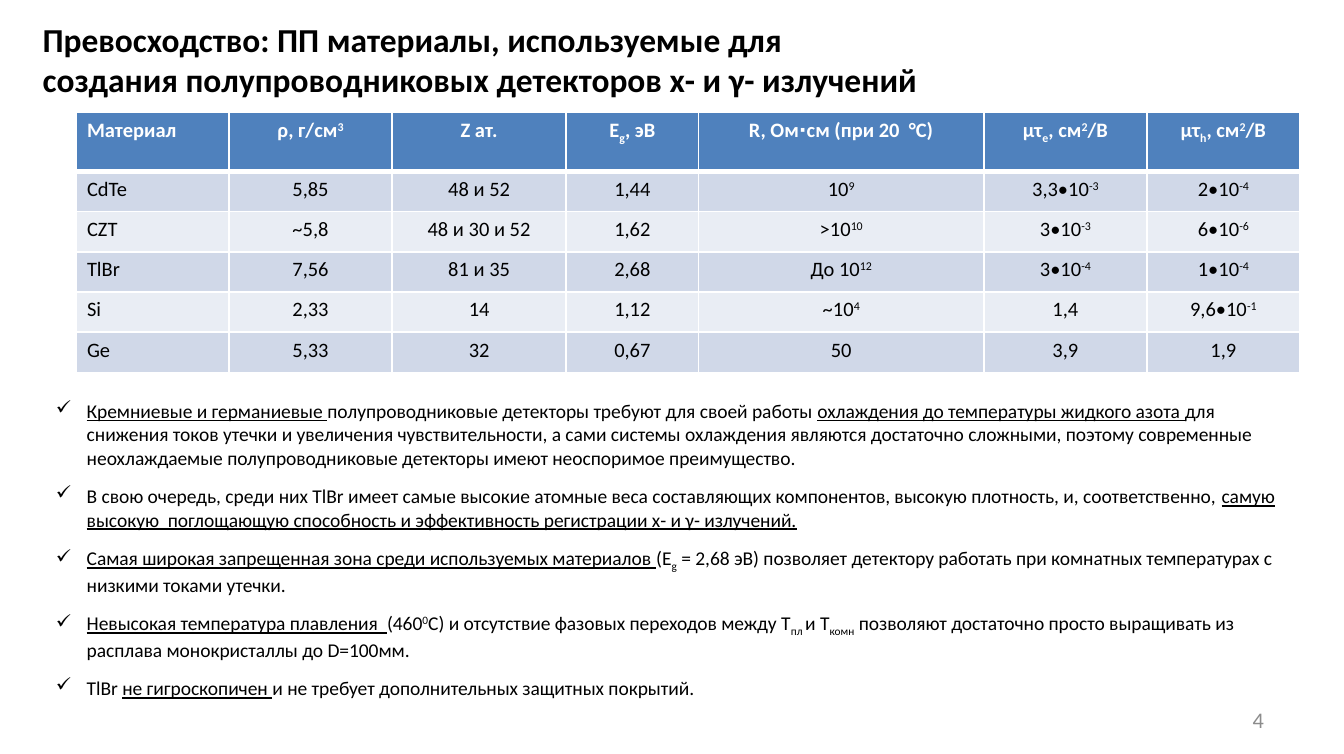
from lxml.etree import SubElement
from pptx import Presentation
from pptx.dml.color import RGBColor
from pptx.enum.shapes import MSO_SHAPE as Preset
from pptx.enum.text import MSO_ANCHOR as Anchor, PP_ALIGN as Align
from pptx.oxml.ns import qn
from pptx.util import Inches, Pt

BLACK, WHITE, GRAY = "000000", "FFFFFF", "8C8C8C"
HEADER, ODD_BAND, EVEN_BAND = "4F81BD", "D0D8E8", "E9EDF4"

TITLE = ("Превосходство: ПП материалы, используемые для |\n|"
         "создания полупроводниковых детекторов х- и γ- излучений")

# "|" separates spans; a span led by ^ is raised, by _ lowered, by < underlined.
MATERIALS = [
    ["Материал", "ρ, г/см|^3", "Z ат.", "Е|_g|, эВ", "R, Ом⋅см (при 20  °С)",
     "μτ|_е|, см|^2|/В", "μτ|_h|, см|^2|/В"],
    ["CdTe", "5,85", "48 и 52", "1,44", "10|^9", "3,3•10|^-3", "2•10|^-4"],
    ["CZT", "~5,8", "48 и 30 и 52", "1,62", ">10|^10", "3•10|^-3", "6•10|^-6"],
    ["TlBr", "7,56", "81 и 35", "2,68", "До 10|^12", "3•10|^-4", "1•10|^-4"],
    ["Si", "2,33", "14", "1,12", "~10|^4", "1,4", "9,6•10|^-1"],
    ["Ge", "5,33", "32", "0,67", "50", "3,9", "1,9"],
]
COLUMN_WIDTHS = [11.4, 12.2, 13, 9.9, 21.3, 12.2, 11.4]
ROW_HEIGHTS = [4.4] + [3] * 5

ADVANTAGES = [
    "<Кремниевые и германиевые |полупроводниковые детекторы требуют для своей работы "
    "|<охлаждения до температуры жидкого азота |для снижения токов утечки и увеличения "
    "чувствительности, а сами системы охлаждения являются достаточно сложными, поэтому "
    "современные неохлаждаемые полупроводниковые детекторы имеют неоспоримое преимущество.",
    "В свою очередь, среди них TlBr имеет самые высокие атомные веса составляющих "
    "компонентов, высокую плотность, и, соответственно, |<самую высокую  поглощающую "
    "способность и эффективность регистрации х- и γ- излучений.",
    "<Самая широкая запрещенная зона среди используемых материалов |(Е|_g| = 2,68 эВ) "
    "позволяет детектору работать при комнатных температурах с низкими токами утечки.",
    "<Невысокая температура плавления  |(460|^0|С) и отсутствие фазовых переходов между Т"
    "|_пл |и Т|_комн| позволяют достаточно просто выращивать из расплава монокристаллы "
    "до D=100мм.",
    "TlBr |<не гигроскопичен |и не требует дополнительных защитных покрытий.",
]


def color(value):
    return RGBColor.from_string(value)


def grid(*cells):
    """Turn counts of grid cells, a tenth of an inch each, into lengths."""
    return [Inches(count / 10) for count in cells]


def write(para, text, size=11, ink=BLACK, bold=False, align=Align.LEFT):
    """Fill a paragraph with the marked spans of a text."""
    para.alignment = align
    for piece in text.split("|"):
        if piece == "\n":
            para.add_line_break()
            continue
        mark = piece[0] if piece[0] in "^_<" else ""
        span = para.add_run()
        span.text = piece[len(mark):]
        font = span.font
        font.name, font.size, font.bold = "Calibri", Pt(size), bold
        font.color.rgb = color(ink)
        if mark == "<":
            font.underline = True
        elif mark:
            span._r.get_or_add_rPr().set("baseline", "30000" if mark == "^" else "-25000")


def add_bullet(para, char, indent):
    props = para._p.get_or_add_pPr()
    props.set("marL", str(indent))
    props.set("indent", str(-indent))
    SubElement(props, qn("a:buChar")).set("char", char)


def add_borders(cell, top=1, bottom=1):
    props = cell._tc.get_or_add_tcPr()
    for side, width in zip("LRTB", (1, 1, top, bottom)):
        line = SubElement(props, qn(f"a:ln{side}"), w=str(Pt(width)))
        fill = SubElement(line, qn("a:solidFill"))
        SubElement(fill, qn("a:srgbClr"), val=WHITE)


class Page:
    def __init__(self, deck):
        self.shapes = deck.slides.add_slide(deck.slide_layouts[6]).shapes

    def text(self, text, place, **style):
        frame = self.shapes.add_textbox(*grid(*place)).text_frame
        frame.word_wrap = True
        frame.vertical_anchor = Anchor.MIDDLE
        write(frame.paragraphs[0], text, **style)

    def bullets(self, items, place, **style):
        panel = self.shapes.add_shape(Preset.RECTANGLE, *grid(*place))
        panel.shadow.inherit = False
        panel.fill.solid()
        panel.fill.fore_color.rgb = color(WHITE)
        panel.line.fill.background()
        frame = panel.text_frame
        frame.word_wrap = True
        frame.vertical_anchor = Anchor.TOP
        for index, item in enumerate(items):
            para = frame.add_paragraph() if index else frame.paragraphs[0]
            add_bullet(para, "✓", Inches(0.23))
            para.space_before = Pt(2.1 if index else 0)
            para.space_after = Pt(6)
            write(para, item, **style)

    def table(self, rows, left, top, widths, heights):
        place = grid(left, top, sum(widths), sum(heights))
        table = self.shapes.add_table(len(rows), len(widths), *place).table
        for column, width in zip(table.columns, grid(*widths)):
            column.width = width
        for row, height in zip(table.rows, grid(*heights)):
            row.height = height
        for r, row in enumerate(rows):
            head = r == 0
            band = HEADER if head else ODD_BAND if r % 2 else EVEN_BAND
            for c, text in enumerate(row):
                cell = table.cell(r, c)
                cell.margin_left = cell.margin_right = Inches(0.08)
                cell.margin_top = cell.margin_bottom = Inches(0.04)
                add_borders(cell, top=3 if r == 1 else 1, bottom=3 if head else 1)
                cell.fill.solid()
                cell.fill.fore_color.rgb = color(band)
                write(cell.text_frame.paragraphs[0], text, bold=head,
                      ink=WHITE if head else BLACK,
                      align=Align.CENTER if c else Align.LEFT)


def main():
    deck = Presentation()
    deck.slide_width, deck.slide_height = grid(100.4, 56.3)
    page = Page(deck)
    page.text("4", (72, 52.2, 23.4, 3), size=12, ink=GRAY, align=Align.RIGHT)
    page.bullets(ADVANTAGES, (3.2, 29.3, 94, 23.9), size=10.5)
    page.text(TITLE, (2.2, 1.1, 67.7, 6.6), size=18, bold=True)
    page.table(MATERIALS, 5.7, 8.4, COLUMN_WIDTHS, ROW_HEIGHTS)
    deck.save("out.pptx")


if __name__ == "__main__":
    main()
